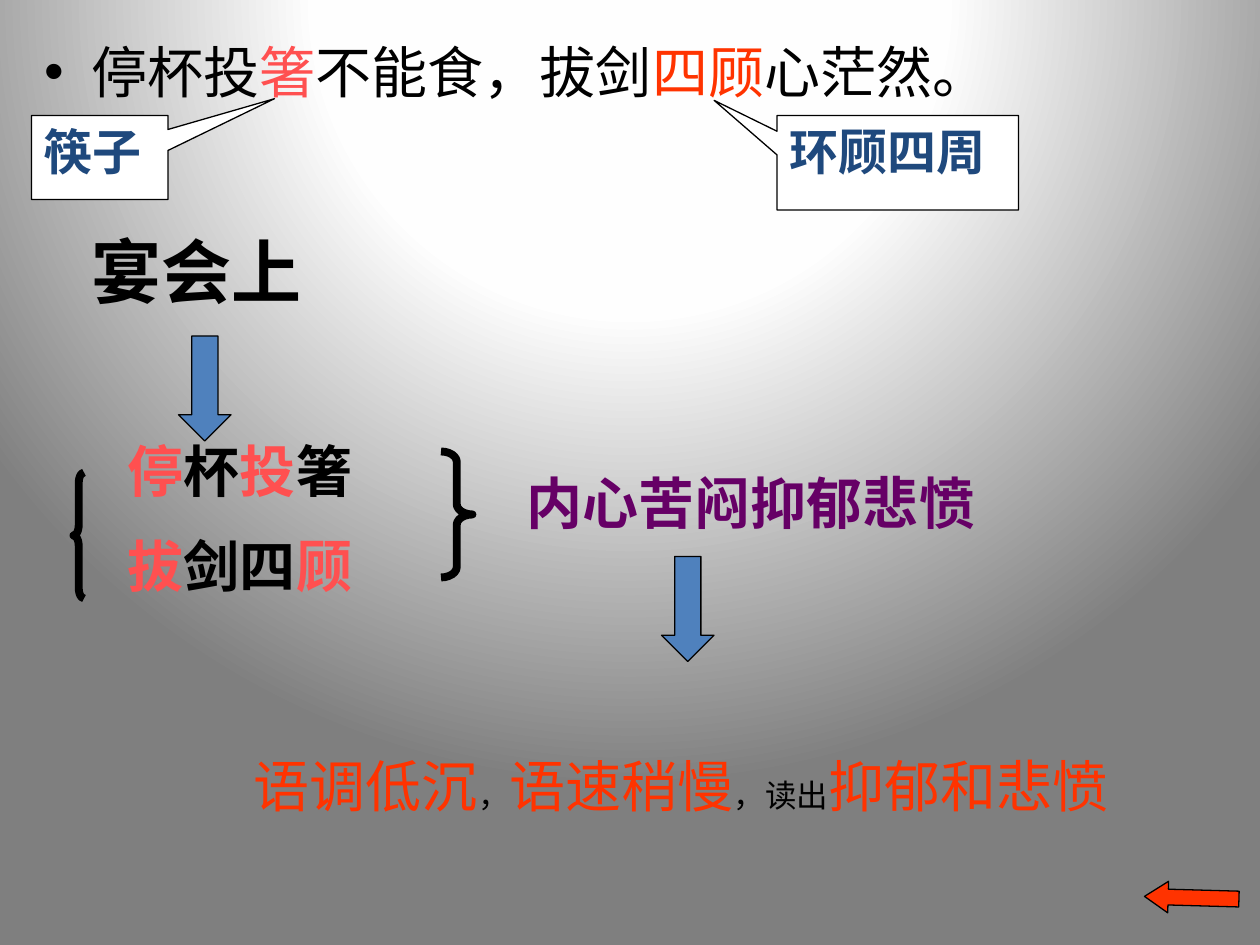
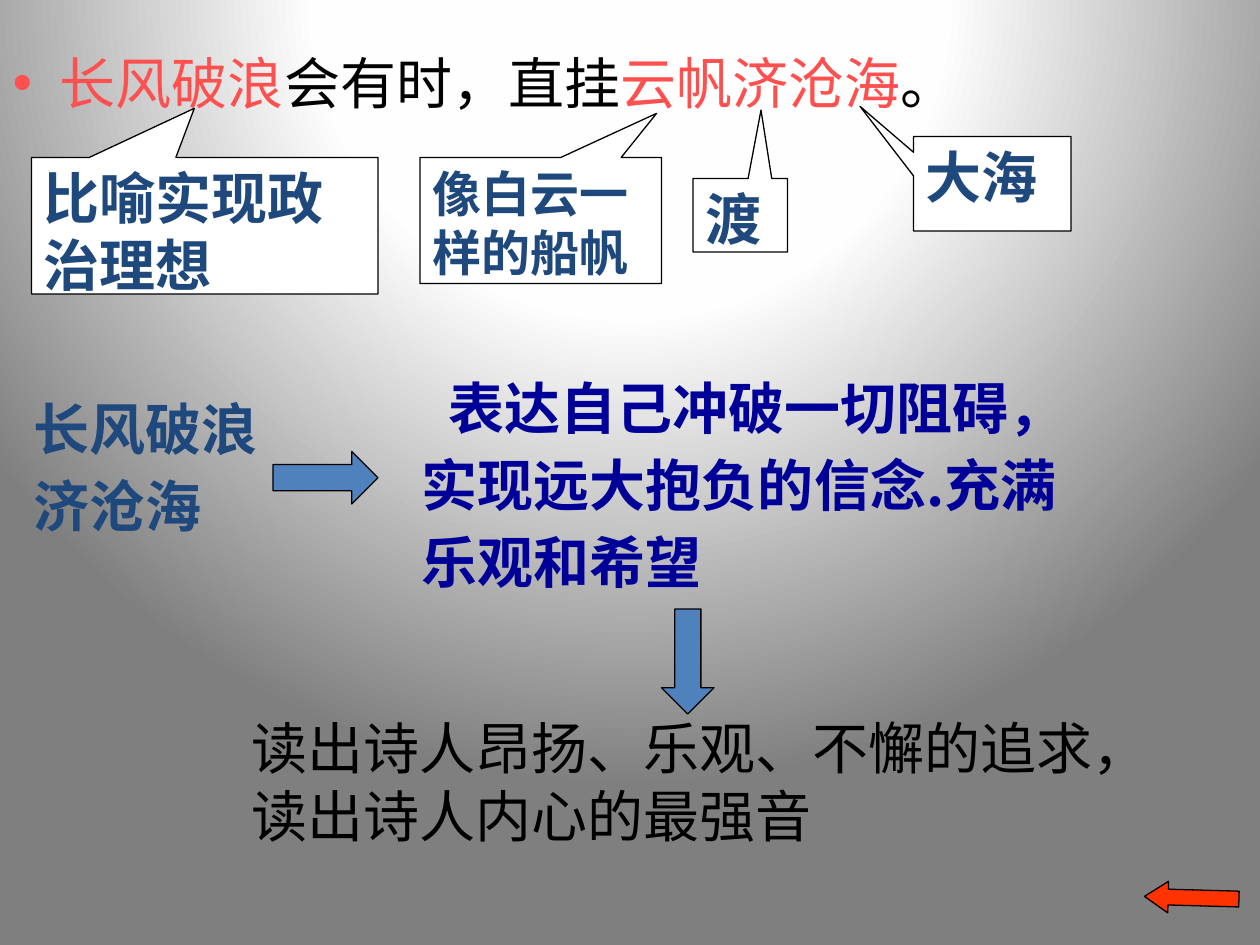
from lxml import etree
from pptx import Presentation
from pptx.dml.color import RGBColor
from pptx.enum.shapes import MSO_SHAPE
from pptx.enum.text import MSO_ANCHOR, PP_ALIGN
from pptx.oxml import parse_xml
from pptx.oxml.ns import nsdecls, qn
from pptx.util import Inches, Pt

COLUMNS, ROWS = 120, 90
WIDTH, HEIGHT = Inches(10), Inches(7.5)

BLACK = RGBColor(0x00, 0x00, 0x00)
WHITE = RGBColor(0xFF, 0xFF, 0xFF)
CORAL = RGBColor(0xFF, 0x50, 0x50)
ORANGE = RGBColor(0xFF, 0x33, 0x00)
NAVY = RGBColor(0x1F, 0x49, 0x7D)
BLUE = RGBColor(0x4F, 0x81, 0xBD)
PURPLE = RGBColor(0x66, 0x00, 0x66)
DEEP_BLUE = RGBColor(0x00, 0x00, 0x99)

LATIN = "Arial"
CHINESE = "Noto Sans CJK SC"

CALLOUT = MSO_SHAPE.RECTANGULAR_CALLOUT
ARROW = MSO_SHAPE.RIGHT_ARROW
LEFT_BRACE = MSO_SHAPE.LEFT_BRACE
RIGHT_BRACE = MSO_SHAPE.RIGHT_BRACE
TOP = MSO_ANCHOR.TOP
LEFT = PP_ALIGN.LEFT

GLOW_STOPS = ((0, "FFFFFF"), (40, "FEFEFE"), (100, "7F7F7F"))


def grid(column, row, columns, rows):
    across, down = WIDTH / COLUMNS, HEIGHT / ROWS
    return (round(column * across), round(row * down),
            round(columns * across), round(rows * down))


def set_glow(layout):
    layout.background.fill.solid()
    holder = layout.element.xpath(".//p:bgPr")[0]
    stops = "".join(
        f'<a:gs pos="{share * 1000}"><a:srgbClr val="{color}"/></a:gs>'
        for share, color in GLOW_STOPS)
    glow = parse_xml(
        f'<a:gradFill {nsdecls("a")} rotWithShape="1"><a:gsLst>{stops}</a:gsLst>'
        '<a:path path="circle"><a:fillToRect l="50000" t="-80000" '
        'r="50000" b="180000"/></a:path></a:gradFill>')
    holder.replace(holder[0], glow)


def write(frame, *lines, size=32, font=CHINESE, color=BLACK, bold=False,
          spacing=None, indent=0):
    frame.word_wrap = True
    for number, line in enumerate(lines):
        para = frame.add_paragraph() if number else frame.paragraphs[0]
        para.alignment = LEFT
        if spacing:
            para.line_spacing = spacing
        if indent:
            para._p.get_or_add_pPr().set("indent", str(Inches(indent)))
        for piece in [line] if isinstance(line, str) else line:
            text, tint, points = (
                (piece, color, size) if isinstance(piece, str)
                else (*piece, size)[:3])
            span = para.add_run()
            span.text = text
            span.font.size = Pt(points)
            span.font.bold = bold
            span.font.color.rgb = tint
            span.font.name = font
            east = etree.SubElement(span._r.get_or_add_rPr(), qn("a:ea"))
            east.set("typeface", CHINESE)


def add_label(page, place, *lines, **style):
    box = page.shapes.add_textbox(*grid(*place))
    write(box.text_frame, *lines, **style)


def add_figure(page, kind, place, adjust, fill=None, weight=0.75, turn=0):
    figure = page.shapes.add_shape(kind, *grid(*place))
    figure.shadow.inherit = False
    for number, value in enumerate(adjust):
        figure.adjustments[number] = value
    if fill is None:
        figure.fill.background()
    else:
        figure.fill.solid()
        figure.fill.fore_color.rgb = fill
    figure.line.color.rgb = BLACK
    figure.line.width = Pt(weight)
    figure.rotation = turn
    return figure


def add_note(page, place, tip, text, size=32):
    note = add_figure(page, CALLOUT, place, tip, WHITE)
    note.text_frame.vertical_anchor = TOP
    write(note.text_frame, text, size=size, font=LATIN, color=NAVY, bold=True)


def add_arrow(page, column, row, turn=0):
    add_figure(page, ARROW, (column, row, 10, 5), (0.5, 0.5), BLUE, turn=turn)


def add_verse_page(deck, layout, place, verse):
    page = deck.slides.add_slide(layout)
    title = page.shapes.title.element
    title.getparent().remove(title)
    body = page.placeholders[1]
    body.left, body.top, body.width, body.height = grid(*place)
    write(body.text_frame, verse)
    add_figure(page, ARROW, (109, 84, 9, 3), (0.5, 0.75), ORANGE, turn=181.6)
    return page


def build_banquet(deck, layout):
    page = add_verse_page(
        deck, layout, (3, 3, 111, 77.4),
        ["停杯投", ("箸", CORAL), "不能食，拔剑", ("四顾", ORANGE), "心茫然。"])
    add_note(page, (3, 11, 13, 8), (1.28, -0.7), "筷子", size=28)
    add_note(page, (74, 11, 23, 9), (-0.76, -0.66), "环顾四周", size=28)
    add_arrow(page, 14.5, 34.5, turn=90)
    add_label(page, (5, 20, 36, 10.4), "宴会上", size=40, font=LATIN,
              bold=True, spacing=1.15, indent=0.21)
    add_label(page, (11, 41, 27.6, 7.6),
              [("停", CORAL), "杯", ("投", CORAL), "箸"], bold=True)
    add_label(page, (11, 50, 27, 7.6),
              [("拔", CORAL), "剑四", ("顾", CORAL)], bold=True)
    add_label(page, (49, 44, 53, 7.6), "内心苦闷抑郁悲愤",
              color=PURPLE, bold=True)
    add_figure(page, RIGHT_BRACE, (42, 43, 3, 12), (0.33, 0.5), weight=4.5)
    add_figure(page, LEFT_BRACE, (7, 45, 1, 12), (1, 0.5), weight=4.5)
    add_label(page, (23, 71, 90, 7.6),
              ["语调低沉", ("，", BLACK, 18), "语速稍慢",
               ("，读出", BLACK, 18), "抑郁和悲愤"],
              font=LATIN, color=ORANGE)
    add_arrow(page, 60.5, 55.5, turn=90)


def build_voyage(deck, layout):
    page = add_verse_page(
        deck, layout, (0, 4, 114, 76.4),
        [("长风破浪", CORAL), "会有时，直挂", ("云帆济沧海", CORAL), "。"])
    add_note(page, (3, 15, 33, 13), (-0.03, -0.86), "比喻实现政治理想")
    add_note(page, (66, 17, 9, 7), (0.22, -1.43), "渡")
    add_note(page, (40, 15, 23, 12), (0.48, -0.85), "像白云一样的船帆", size=28)
    add_note(page, (87, 13, 15, 9), (-0.84, -0.82), "大海")
    add_label(page, (2, 36, 24, 16), "长风破浪", "济沧海",
              color=NAVY, bold=True, spacing=1.15)
    add_arrow(page, 26, 43)
    add_label(page, (39, 34, 65.6, 23.3),
              "表达自己冲破一切阻碍，实现远大抱负的信念.充满乐观和希望",
              color=DEEP_BLUE, bold=True, spacing=1.15, indent=0.21)
    add_arrow(page, 60.5, 60.5, turn=90)
    add_label(page, (22.8, 67.4, 83.2, 14),
              "读出诗人昂扬、乐观、不懈的追求，读出诗人内心的最强音", font=LATIN)


def main():
    deck = Presentation()
    deck.slide_width, deck.slide_height = WIDTH, HEIGHT
    layout = deck.slide_layouts[1]
    set_glow(layout)
    build_banquet(deck, layout)
    build_voyage(deck, layout)
    deck.save("out.pptx")


if __name__ == "__main__":
    main()
